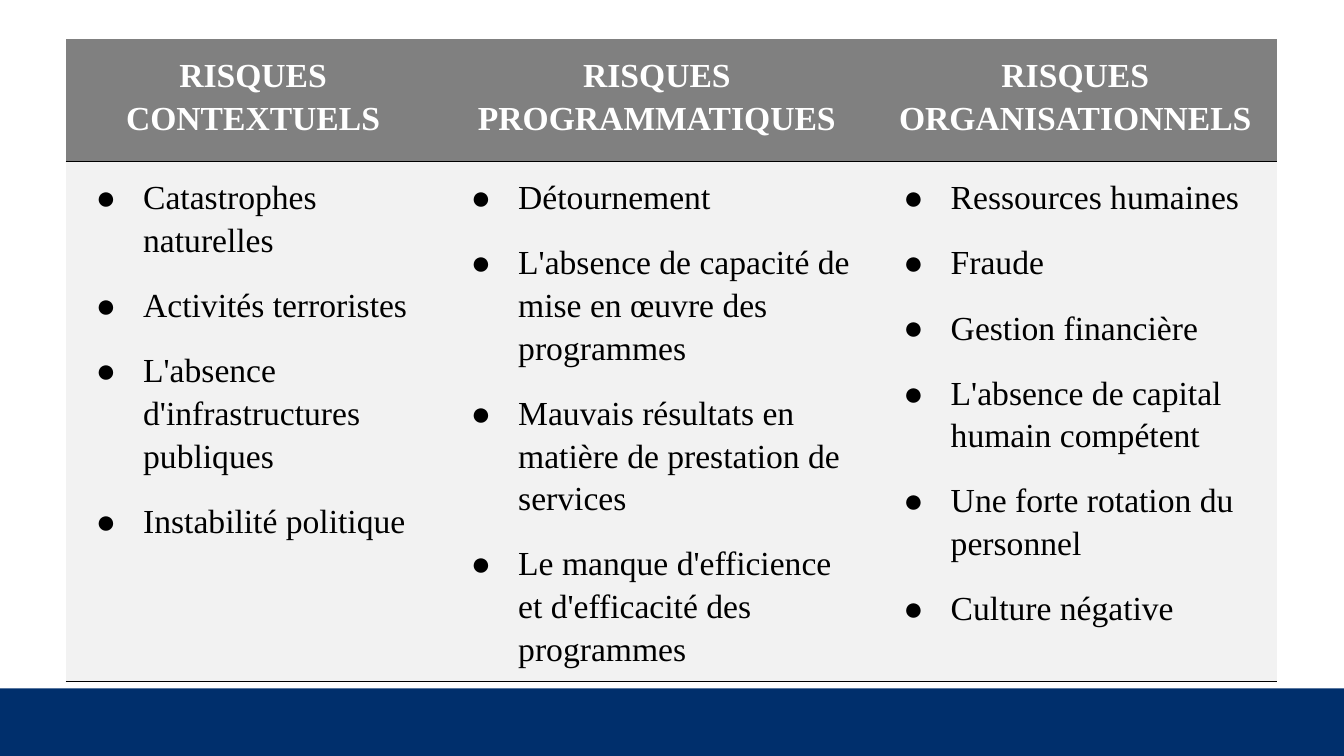
"""Build a slide with a table of contextual, programme and organisational risks."""
from lxml import etree
from pptx import Presentation
from pptx.dml.color import RGBColor
from pptx.enum.shapes import MSO_SHAPE
from pptx.enum.text import PP_ALIGN
from pptx.oxml.ns import qn
from pptx.util import Inches, Pt

RECT = MSO_SHAPE.RECTANGLE
LEFT, CENTER = PP_ALIGN.LEFT, PP_ALIGN.CENTER
NO_GRID = "{2D5ABB26-0587-4C30-8999-92F81FD0307C}"

THEME = {
    "font": "Times New Roman", "size": 24, "lines": 1.15, "gap": 16,
    "navy": "002F6C", "head": "808080", "body": "F2F2F2",
    "white": "FFFFFF", "black": "000000",
}
RISKS = {
    "RISQUES CONTEXTUELS": [
        "Catastrophes naturelles",
        "Activités terroristes",
        "L'absence d'infrastructures publiques",
        "Instabilité politique",
    ],
    "RISQUES PROGRAMMATIQUES": [
        "Détournement",
        "L'absence de capacité de mise en œuvre des programmes",
        "Mauvais résultats en matière de prestation de services",
        "Le manque d'efficience et d'efficacité des programmes",
    ],
    "RISQUES ORGANISATIONNELS": [
        "Ressources humaines",
        "Fraude",
        "Gestion financière",
        "L'absence de capital humain compétent",
        "Une forte rotation du personnel",
        "Culture négative",
    ],
}
WIDTHS, HEIGHTS = [3.72, 4.29, 4.01], [1.21, 4.3]


def write(frame, lines, color, bold=False, align=LEFT, bullet=None):
    """Fill a text frame with one paragraph per line."""
    for i, line in enumerate(lines):
        para = frame.add_paragraph() if i else frame.paragraphs[0]
        para.alignment, para.line_spacing = align, THEME["lines"]
        para.space_before = Pt(THEME["gap"] if i else 0)
        run = para.add_run()
        run.text = line
        run.font.name, run.font.size = THEME["font"], Pt(THEME["size"])
        run.font.bold = bold
        run.font.color.rgb = RGBColor.from_string(color)
        if bullet:
            props = para._p.get_or_add_pPr()
            props.set("marL", str(Inches(0.67)))
            props.set("indent", str(Inches(-0.47)))
            tint = etree.SubElement(props, qn("a:buClr"))
            etree.SubElement(tint, qn("a:srgbClr"), val=color)
            etree.SubElement(props, qn("a:buFont"), typeface=THEME["font"])
            etree.SubElement(props, qn("a:buChar"), char=bullet)


def style(cell, fill, sides):
    """Set the margins, rules and fill of a cell."""
    cell.margin_left = cell.margin_right = Inches(0.1)
    cell.margin_top = cell.margin_bottom = Inches(0.13)
    props = cell._tc.get_or_add_tcPr()
    for side in sides:
        rule = etree.SubElement(props, qn(f"a:ln{side}"), w=str(Pt(1)))
        paint = etree.SubElement(rule, qn("a:solidFill"))
        etree.SubElement(paint, qn("a:srgbClr"), val=THEME["black"])
    cell.fill.solid()
    cell.fill.fore_color.rgb = RGBColor.from_string(fill)


deck = Presentation()
deck.slide_width, deck.slide_height = Inches(13.33), Inches(7.5)
slide = deck.slides.add_slide(deck.slide_layouts[6])

top = Inches(6.83)
band = slide.shapes.add_shape(RECT, 0, top, deck.slide_width, deck.slide_height - top)
band.shadow.inherit = False
band.fill.solid()
band.fill.fore_color.rgb = RGBColor.from_string(THEME["navy"])
band.line.fill.background()

grid = slide.shapes.add_table(
    len(HEIGHTS), len(WIDTHS), Inches(0.65), Inches(0.39),
    Inches(sum(WIDTHS)), Inches(sum(HEIGHTS))).table
grid.horz_banding = False
grid._tbl.tblPr.find(qn("a:tableStyleId")).text = NO_GRID
for row, height in zip(grid.rows, HEIGHTS):
    row.height = Inches(height)

for c, (title, risks) in enumerate(RISKS.items()):
    grid.columns[c].width = Inches(WIDTHS[c])
    head, body = grid.cell(0, c), grid.cell(1, c)
    style(head, THEME["head"], "B")
    style(body, THEME["body"], "TB")
    write(head.text_frame, [title], THEME["white"], bold=True, align=CENTER)
    write(body.text_frame, risks, THEME["black"], bullet="●")

deck.save("out.pptx")
